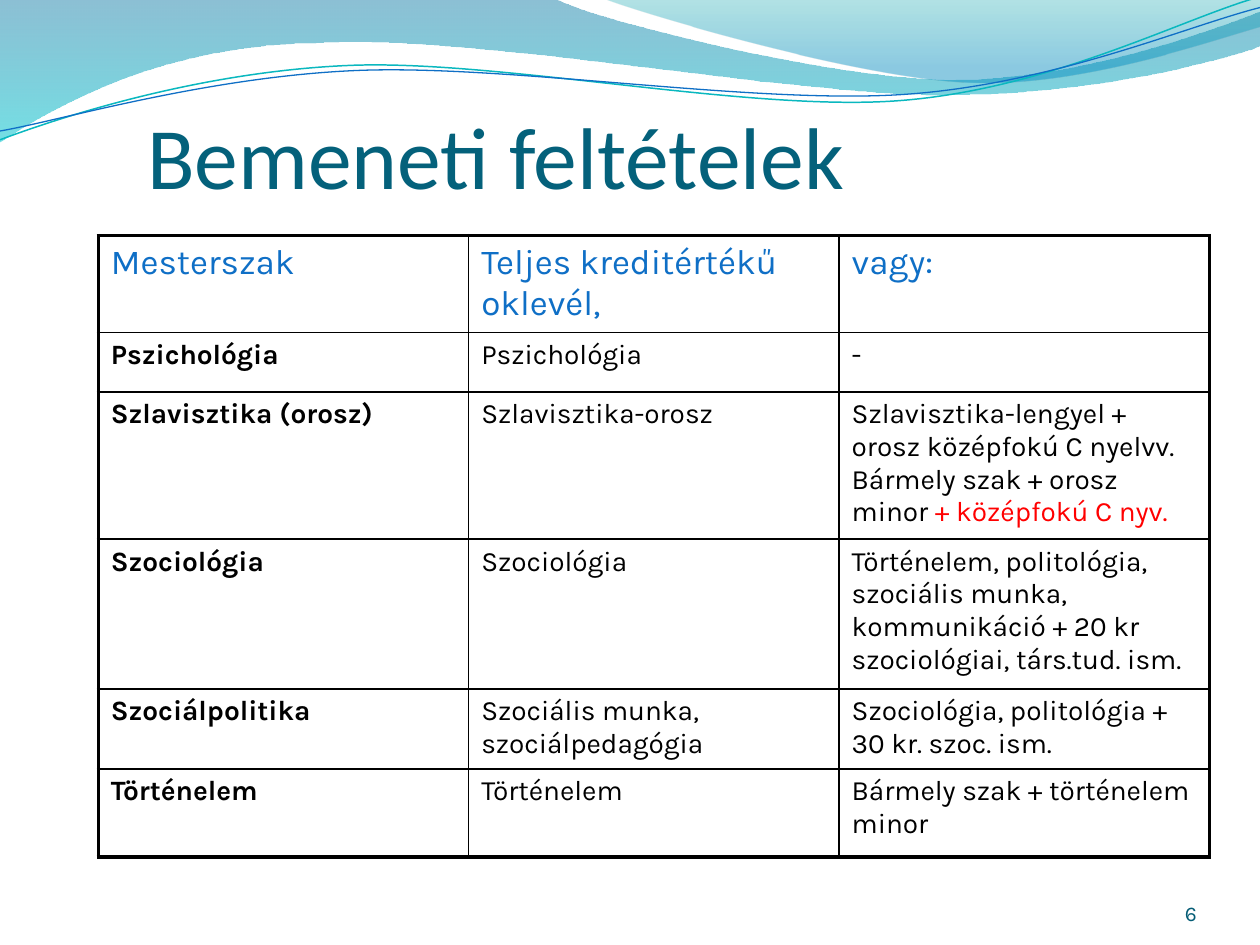
import pptx
import pptx.dml.color
import pptx.enum.text
import pptx.oxml.ns
import pptx.util
from lxml import etree

Inches, Pt = pptx.util.Inches, pptx.util.Pt
qn = pptx.oxml.ns.qn
ALIGN, ANCHOR = pptx.enum.text.PP_ALIGN, pptx.enum.text.MSO_ANCHOR
WIDTH, HEIGHT = 10, 7.5

TITLE = "Bemeneti feltételek"
PAGE_NUMBER = "6"
HEADINGS = ["Mesterszak", "Teljes kreditértékű oklevél,", "vagy:"]
PROGRAMMES = [
    ["Pszichológia", "Pszichológia", "-"],
    ["Szlavisztika (orosz)", "Szlavisztika-orosz",
     "Szlavisztika-lengyel + orosz középfokú C nyelvv.\vBármely szak + orosz minor "],
    ["Szociológia", "Szociológia",
     "Történelem, politológia, szociális munka, kommunikáció + 20 kr "
     "szociológiai, társ.tud. ism."],
    ["Szociálpolitika", "Szociális munka, szociálpedagógia",
     "Szociológia, politológia + 30 kr. szoc. ism."],
    ["Történelem", "Történelem", "Bármely szak + történelem minor"],
]
ADDED_REQUIREMENTS = {(2, 2): "+ középfokú C nyv."}
ROW_HEIGHTS = [0.77, 0.47, 1.17, 1.19, 0.63, 0.7]
COLUMN_WIDTH = 2.94

# Waves: a start point, then line ends (2 numbers) or Bézier curves (6 numbers)
BANDS = [
    ([(0, -0.01), (4.4, -0.01), (4.76, 0.17, 6.64, 0.63, 7.58, 0.63),
      (8.53, 0.63, 9.58, 0.26, 10, 0.09), (10.01, 0.36),
      (9.83, 0.44, 8.7, 0.76, 7.46, 0.75), (6.22, 0.75, 3.82, 0.28, 2.57, 0.34),
      (1.29, 0.35, 0.46, 0.83, -0.01, 1.13)],
     [(0, "0074A1", 45), (1, "00C6CF", 55)]),
    ([(4.79, -0.01), (5.09, 0.11, 6.82, 0.62, 7.69, 0.65),
      (8.56, 0.69, 9.61, 0.32, 10, 0.21), (10, 0)],
     [(0, "00A1A9", 30), (0.8, "008BBF", 45)]),
]
STRANDS = [
    ([(0, 1.11), (0.48, 0.93, 1.58, 0.57, 2.77, 0.52),
      (3.95, 0.47, 5.93, 0.89, 7.13, 0.8), (8.33, 0.71, 9.38, 0.15, 9.98, -0.02)],
     "0AB8BF", 0.85),
    ([(0, 1.04), (0.47, 0.96, 1.64, 0.61, 2.83, 0.56),
      (4.03, 0.51, 5.97, 0.83, 7.17, 0.75), (8.36, 0.67, 9.41, 0.21, 10, 0.06)],
     "0F6FC6", 0.75),
]


def rgb(value):
    return pptx.dml.color.RGBColor.from_string(value)


def add_wave(slide, segments, closed):
    ends = [tuple(map(Inches, segment[-2:])) for segment in segments]
    builder = slide.shapes.build_freeform(*ends[0], scale=1.0)
    builder.add_line_segments(ends[1:], close=closed)
    wave = builder.convert_to_shape()
    wave.shadow.inherit = False
    # Bend the straight pieces that have control points
    pieces = list(wave._element.spPr.iter(qn("a:lnTo")))
    for piece, segment in zip(pieces, segments[1:]):
        if len(segment) == 6:
            curve = etree.Element(qn("a:cubicBezTo"))
            for x, y in zip(segment[::2], segment[1::2]):
                etree.SubElement(curve, qn("a:pt"), x=str(Inches(x) - wave.left),
                                 y=str(Inches(y) - wave.top))
            piece.getparent().replace(piece, curve)
    return wave


def style(run, size, color, font="Karla", bold=False):
    run.font.size, run.font.name, run.font.bold = Pt(size), font, bold
    run.font.color.rgb = rgb(color)


def add_label(slide, text, box, size, color, font, align, top_inset=0):
    label = slide.shapes.add_textbox(*map(Inches, box))
    frame = label.text_frame
    frame.word_wrap = True
    frame.vertical_anchor = ANCHOR.BOTTOM
    frame.margin_left = frame.margin_right = frame.margin_bottom = 0
    frame.margin_top = Inches(top_inset)
    frame.text = text
    frame.paragraphs[0].alignment = align
    style(frame.paragraphs[0].runs[0], size, color, font)


def set_borders(cell, widths):
    properties = cell._tc.get_or_add_tcPr()
    for position, (side, width) in enumerate(widths.items()):
        line = etree.Element(qn("a:" + side), w=str(Pt(width)))
        fill = etree.SubElement(line, qn("a:solidFill"))
        etree.SubElement(fill, qn("a:srgbClr"), val="000000")
        properties.insert(position, line)


prs = pptx.Presentation()
prs.slide_width, prs.slide_height = Inches(WIDTH), Inches(HEIGHT)
slide = prs.slides.add_slide(prs.slide_layouts[6])

# Wave bands and strands across the top
for segments, stops in BANDS:
    band = add_wave(slide, segments, True)
    band.line.fill.background()
    band.fill.gradient()
    band.fill.gradient_angle = 270
    for stop, (position, color, _) in zip(band.fill.gradient_stops, stops):
        stop.position, stop.color.rgb = position, rgb(color)
    for node, (_, _, opacity) in zip(band._element.spPr.iter(qn("a:srgbClr")), stops):
        etree.SubElement(node, qn("a:alpha"), val=str(opacity * 1000))
for segments, color, width in STRANDS:
    strand = add_wave(slide, segments, False)
    strand.fill.background()
    strand.line.color.rgb, strand.line.width = rgb(color), Pt(width)

# Title
add_label(slide, TITLE, (1.17, 0.33, 8.25, 1.31), 50, "04617B", "Calibri",
          ALIGN.LEFT, 0.05)

# Entry requirements
rows = [HEADINGS] + PROGRAMMES
last_row, last_column = len(rows) - 1, len(HEADINGS) - 1
requirements = slide.shapes.add_table(
    len(rows), len(HEADINGS), Inches(0.78), Inches(1.87),
    Inches(COLUMN_WIDTH * len(HEADINGS)), Inches(sum(ROW_HEIGHTS))).table
requirements.first_row = requirements.horz_banding = False
for column in requirements.columns:
    column.width = Inches(COLUMN_WIDTH)
for r, texts in enumerate(rows):
    requirements.rows[r].height = Inches(ROW_HEIGHTS[r])
    size, color = (20, "0F6FC6") if r == 0 else (16, "000000")
    for c, text in enumerate(texts):
        cell = requirements.cell(r, c)
        cell.fill.background()
        paragraph = cell.text_frame.paragraphs[0]
        paragraph.text = text
        for run in paragraph.runs:
            style(run, size, color, bold=r > 0 and c == 0)
        for line_break in paragraph._p.iter(qn("a:br")):
            etree.SubElement(line_break, qn("a:rPr"), sz=str(size * 100))
        if (r, c) in ADDED_REQUIREMENTS:
            addition = paragraph.add_run()
            addition.text = ADDED_REQUIREMENTS[r, c]
            style(addition, size, "FF0000")
        outer = {"lnL": c == 0, "lnR": c == last_column,
                 "lnT": r == 0, "lnB": r == last_row}
        set_borders(cell, {side: 2.25 if edge else 1 for side, edge in outer.items()})

# Page number
add_label(slide, PAGE_NUMBER, (8.67, 6.95, 0.83, 0.4), 12, "045C75", "Karla",
          ALIGN.RIGHT)

prs.save("out.pptx")
